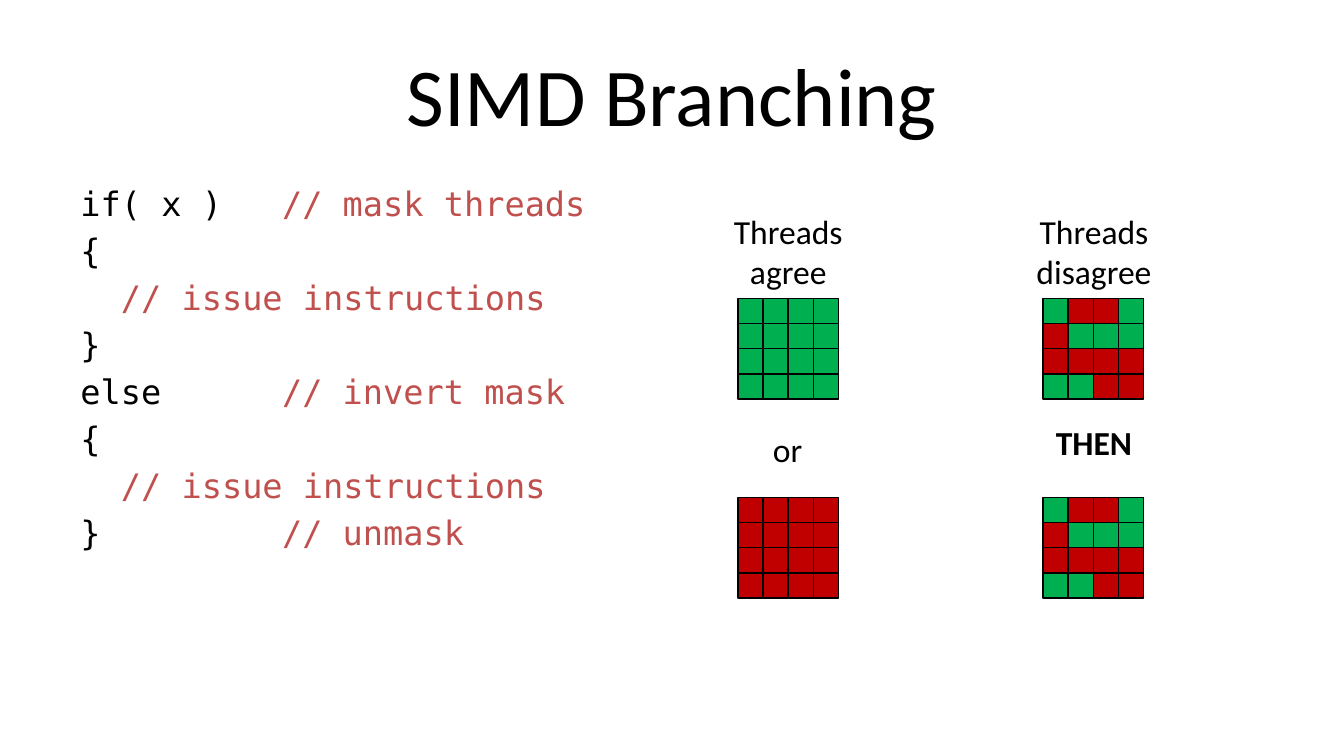
from lxml import etree
from pptx import Presentation
from pptx.dml.color import RGBColor
from pptx.enum.shapes import MSO_SHAPE
from pptx.enum.text import MSO_ANCHOR, PP_ALIGN
from pptx.oxml.ns import qn
from pptx.util import Inches, Pt

RECTANGLE = MSO_SHAPE.RECTANGLE
CENTER = PP_ALIGN.CENTER
LEFT = PP_ALIGN.LEFT
MIDDLE = MSO_ANCHOR.MIDDLE

TITLE_ONLY = 5
TEXT_FONT = "Calibri"
CODE_FONT = "DejaVu Sans Mono"
BLACK = "000000"
COMMENT = "C0504D"
GREEN = "00B050"
RED = "C00000"

MASK_SIZE = 0.75
AGREE_X, DISAGREE_X = 5.49, 7.76
TOP_Y, BOTTOM_Y = 2.22, 3.7
TAB_STEP = 0.5
TAB_COUNT = 3

ALL_ON = ["1111"] * 4
ALL_OFF = ["0000"] * 4
MIXED = ["1001", "0111", "0000", "1100"]

CODE_LINES = [
    ("if( x ) \t", "// mask threads"),
    ("{", ""),
    ("  ", "// issue instructions"),
    ("}", ""),
    ("else \t\t", "// invert mask"),
    ("{", ""),
    ("  ", "// issue instructions"),
    ("}\t\t\t", "// unmask"),
]
LABELS = [
    ("Threads agree", (5.06, 1.52, 1.61, 0.71), False),
    ("or", (5.49, 3.14, 0.74, 0.4), False),
    ("Threads disagree", (7.2, 1.52, 1.88, 0.71), False),
    ("THEN", (7.43, 3.09, 1.42, 0.4), True),
]
GROUPED_MASKS = [
    (AGREE_X, TOP_Y, ALL_ON),
    (AGREE_X, BOTTOM_Y, ALL_OFF),
]
LOOSE_MASKS = [
    (DISAGREE_X, TOP_Y, MIXED),
    (DISAGREE_X, BOTTOM_Y, MIXED),
]


def color(value):
    """Turn a hex string into a colour."""
    return RGBColor.from_string(value)


def add_run(paragraph, text, size, font=TEXT_FONT, fill=BLACK, bold=False):
    """Append one formatted run to a paragraph."""
    run = paragraph.add_run()
    run.text = text
    run.font.size = Pt(size)
    run.font.name = font
    run.font.bold = bold
    run.font.color.rgb = color(fill)


def add_text_box(slide, box):
    """Add a wrapping text box and return its text frame."""
    frame = slide.shapes.add_textbox(*map(Inches, box)).text_frame
    frame.word_wrap = True
    return frame


def set_title(slide, text):
    """Place and fill the title placeholder."""
    title = slide.shapes.title
    title.left, title.top, title.width, title.height = map(
        Inches, (0.5, 0.23, 9, 0.94))
    title.text_frame.vertical_anchor = MIDDLE
    paragraph = title.text_frame.paragraphs[0]
    paragraph.alignment = CENTER
    add_run(paragraph, text, 44)


def add_tab_stops(paragraph):
    """Give a paragraph evenly spaced left tab stops."""
    properties = paragraph._p.get_or_add_pPr()
    tabs = etree.SubElement(properties, qn("a:tabLst"))
    for number in range(1, TAB_COUNT + 1):
        position = str(Inches(number * TAB_STEP))
        etree.SubElement(tabs, qn("a:tab"), pos=position, algn="l")


def add_code(slide, lines):
    """Add the code listing with coloured comments."""
    frame = add_text_box(slide, (0.5, 1.31, 4.42, 4.09))
    for index, (statement, comment) in enumerate(lines):
        paragraph = frame.add_paragraph() if index else frame.paragraphs[0]
        paragraph.alignment = LEFT
        if index:
            paragraph.space_before = Pt(3.6)
        if "\t" in statement:
            add_tab_stops(paragraph)
        add_run(paragraph, statement, 18, CODE_FONT)
        if comment:
            add_run(paragraph, comment, 18, CODE_FONT, COMMENT)


def add_label(slide, text, box, bold):
    """Add a centred label."""
    paragraph = add_text_box(slide, box).paragraphs[0]
    paragraph.alignment = CENTER
    add_run(paragraph, text, 18, bold=bold)


def add_mask(shapes, left, top, rows):
    """Add a grid of thread cells, green where active."""
    side = MASK_SIZE / len(rows)
    for row, states in enumerate(rows):
        for column, state in enumerate(states):
            cell = shapes.add_shape(
                RECTANGLE, Inches(left + column * side),
                Inches(top + row * side), Inches(side), Inches(side))
            cell.shadow.inherit = False
            cell.fill.solid()
            cell.fill.fore_color.rgb = color(GREEN if state == "1" else RED)
            cell.line.color.rgb = color(BLACK)
            cell.line.width = Pt(0.75)


def main():
    """Build the slide and save it."""
    presentation = Presentation()
    presentation.slide_width = Inches(10)
    presentation.slide_height = presentation.slide_width * 9 // 16
    slide = presentation.slides.add_slide(
        presentation.slide_layouts[TITLE_ONLY])
    set_title(slide, "SIMD Branching")
    add_code(slide, CODE_LINES)
    for text, box, bold in LABELS:
        add_label(slide, text, box, bold)
    for left, top, rows in GROUPED_MASKS:
        add_mask(slide.shapes.add_group_shape().shapes, left, top, rows)
    for left, top, rows in LOOSE_MASKS:
        add_mask(slide.shapes, left, top, rows)
    presentation.save("out.pptx")


if __name__ == "__main__":
    main()
